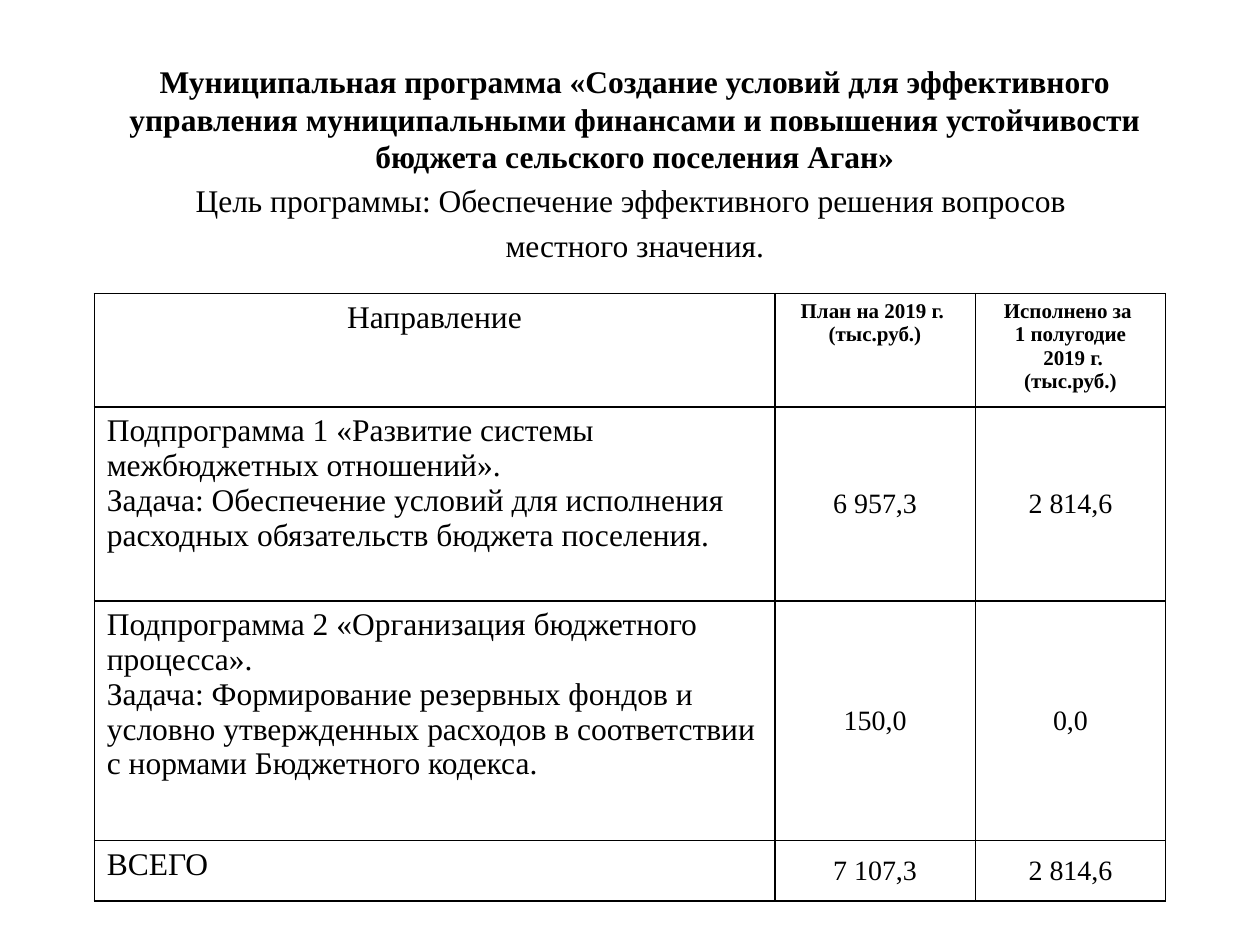
from dataclasses import dataclass

from lxml import etree
from pptx import Presentation
from pptx.dml.color import RGBColor
from pptx.enum import text
from pptx.oxml import ns
from pptx.util import Cm, Pt


@dataclass(frozen=True)
class Theme:
    font: str = "Times New Roman"
    ink: str = "000000"
    body: int = 18
    number: int = 16
    header: int = 12
    border: int = 1
    space_before: float = 3.6


@dataclass(frozen=True)
class Style:
    size: int
    bold: bool = False
    align: text.PP_ALIGN = text.PP_ALIGN.CENTER
    anchor: text.MSO_ANCHOR = text.MSO_ANCHOR.TOP


@dataclass(frozen=True)
class Row:
    height: float
    direction: str
    plan: str
    done: str


THEME = Theme()
TITLE = Style(THEME.body, bold=True)
GOAL = Style(THEME.body)
HEADING = Style(THEME.header, bold=True)
DIRECTION = Style(THEME.body, align=text.PP_ALIGN.LEFT)
NUMBER = Style(THEME.number, anchor=text.MSO_ANCHOR.MIDDLE)

PROGRAM = [
    ("Муниципальная программа «Создание условий для эффективного управления "
     "муниципальными финансами и повышения устойчивости бюджета сельского поселения Аган»", TITLE),
    ("Цель программы: Обеспечение эффективного решения вопросов ", GOAL),
    ("местного значения.", GOAL),
]
COLUMN_WIDTHS = (13.72, 4.04, 3.84)
ROWS = [
    Row(1.22, "Направление", "План на 2019 г. \n(тыс.руб.)",
        "Исполнено за \n1 полугодие\n 2019 г.\n(тыс.руб.)"),
    Row(3.91, "Подпрограмма 1 «Развитие системы межбюджетных отношений».\n"
        "Задача: Обеспечение условий для исполнения расходных обязательств бюджета поселения.",
        "6 957,3", "2 814,6"),
    Row(4.83, "Подпрограмма 2 «Организация бюджетного процесса».\n"
        "Задача: Формирование резервных фондов и условно утвержденных расходов "
        "в соответствии с нормами Бюджетного кодекса.", "150,0", "0,0"),
    Row(1.22, "ВСЕГО", "7 107,3", "2 814,6"),
]


def format_paragraph(para, style: Style) -> None:
    para.alignment = style.align
    for span in para.runs:
        span.font.name = THEME.font
        span.font.size = Pt(style.size)
        span.font.bold = style.bold
        span.font.color.rgb = RGBColor.from_string(THEME.ink)


def add_program(page) -> None:
    box = page.shapes.add_textbox(Cm(1.9), Cm(1.12), Cm(21.8), Cm(4.6))
    frame = box.text_frame
    frame.word_wrap = True
    frame.text = "\n".join(line for line, _ in PROGRAM)
    for para, (_, style) in zip(frame.paragraphs, PROGRAM):
        para.space_before = Pt(THEME.space_before)
        format_paragraph(para, style)


def add_borders(cell) -> None:
    """Draw all four sides; the lines must precede the cell's fill."""
    properties = cell._tc.get_or_add_tcPr()
    for index, side in enumerate(("lnL", "lnR", "lnT", "lnB")):
        line = etree.Element(ns.qn(f"a:{side}"), w=str(Pt(THEME.border)))
        fill = etree.SubElement(line, ns.qn("a:solidFill"))
        etree.SubElement(fill, ns.qn("a:srgbClr"), val=THEME.ink)
        properties.insert(index, line)


def fill_cell(cell, content: str, style: Style) -> None:
    cell.text_frame.text = content
    cell.vertical_anchor = style.anchor
    for para in cell.text_frame.paragraphs:
        format_paragraph(para, style)
    cell.fill.background()
    add_borders(cell)


def add_budget_table(page) -> None:
    height = sum(row.height for row in ROWS)
    frame = page.shapes.add_table(len(ROWS), len(COLUMN_WIDTHS), Cm(1.9), Cm(5.92),
                                  Cm(sum(COLUMN_WIDTHS)), Cm(height))
    table = frame.table
    table.first_row = table.horz_banding = False
    for column, width in zip(table.columns, COLUMN_WIDTHS):
        column.width = Cm(width)
    for index, row in enumerate(ROWS):
        table.rows[index].height = Cm(row.height)
        styles = (DIRECTION, NUMBER, NUMBER) if index else (GOAL, HEADING, HEADING)
        contents = (row.direction, row.plan, row.done)
        for cell, content, style in zip(table.rows[index].cells, contents, styles):
            fill_cell(cell, content, style)


def main() -> None:
    deck = Presentation()
    deck.slide_width, deck.slide_height = Cm(25.4), Cm(19.05)
    page = deck.slides.add_slide(deck.slide_layouts[6])
    add_program(page)
    add_budget_table(page)
    deck.save("out.pptx")


if __name__ == "__main__":
    main()
